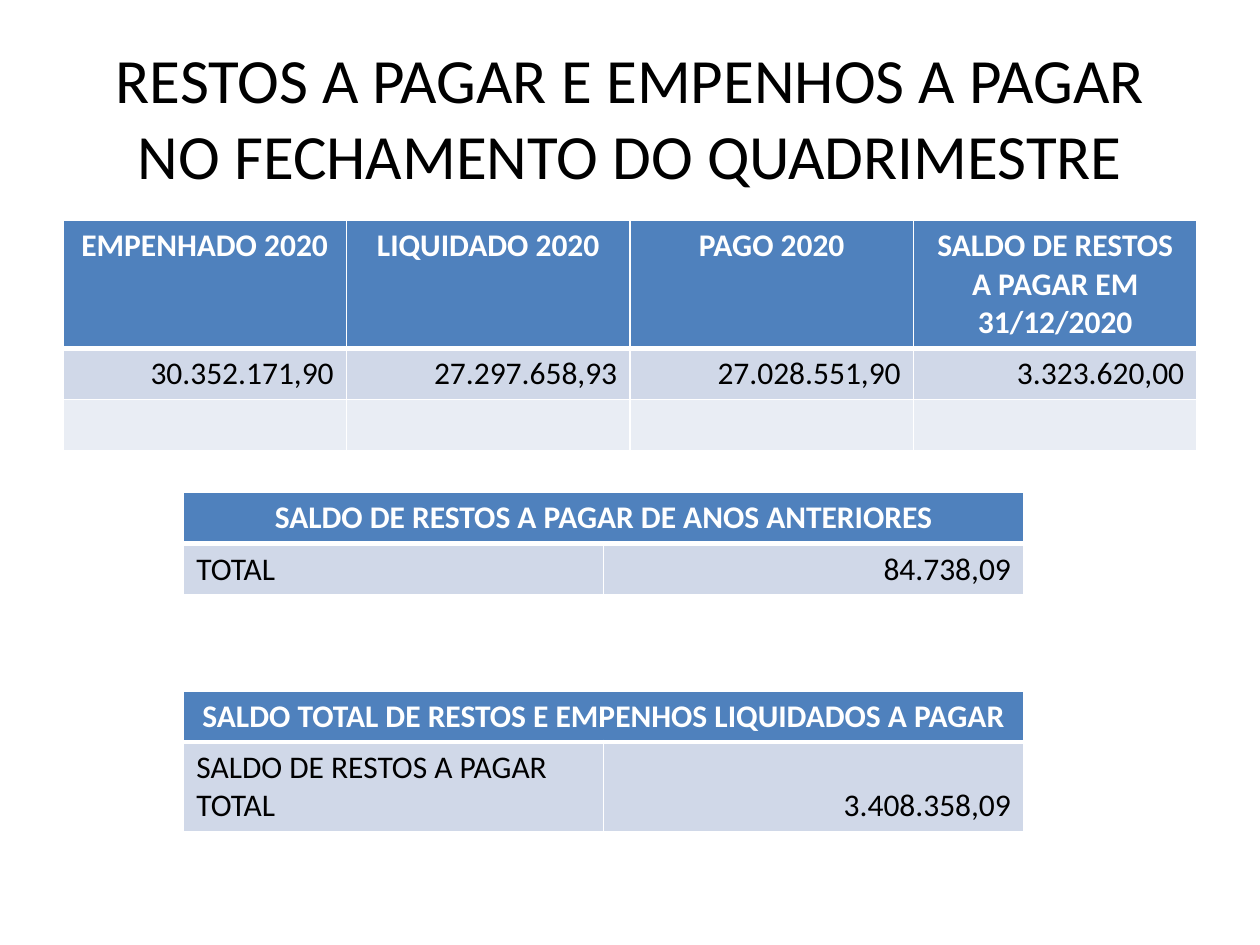
from dataclasses import dataclass

from lxml import etree
from pptx import Presentation
from pptx.dml.color import RGBColor
from pptx.enum import text
from pptx.oxml import ns
from pptx.util import Pt

LEFT, CENTER, RIGHT = text.PP_ALIGN.LEFT, text.PP_ALIGN.CENTER, text.PP_ALIGN.RIGHT


@dataclass(frozen=True)
class Theme:
    font: str = "Calibri"
    title_size: int = 36
    table_size: int = 18
    ink: str = "000000"
    paper: str = "FFFFFF"
    header: str = "4F81BD"
    bands: tuple = ("D0D8E8", "E9EDF4")
    rule: int = 1
    header_rule: int = 3


THEME = Theme()
ROW = 29.2


def format_text(frame, size, color, align, bold=False):
    for paragraph in frame.paragraphs:
        paragraph.alignment = align
        font = paragraph.font
        font.name, font.size, font.bold = THEME.font, Pt(size), bold
        font.color.rgb = RGBColor.from_string(color)


def set_borders(cell, top, bottom):
    properties = cell._tc.get_or_add_tcPr()
    widths = {"L": THEME.rule, "R": THEME.rule, "T": top, "B": bottom}
    for position, (side, width) in enumerate(widths.items()):
        line = etree.Element(ns.qn(f"a:ln{side}"), w=str(Pt(width)))
        fill = etree.SubElement(line, ns.qn("a:solidFill"))
        etree.SubElement(fill, ns.qn("a:srgbClr"), val=THEME.paper)
        properties.insert(position, line)


def add_title(slide, wording):
    title = slide.shapes.title
    title.left, title.top, title.width, title.height = Pt(36), Pt(21.6), Pt(648), Pt(90)
    title.text_frame.text = wording
    title.text_frame.vertical_anchor = text.MSO_ANCHOR.MIDDLE
    format_text(title.text_frame, THEME.title_size, THEME.ink, CENTER)


def add_balance_table(slide, left, top, width, heights, rows, aligns):
    """Header row on top; a header with a single entry spans all columns."""
    columns = len(aligns)
    table = slide.shapes.add_table(len(rows), columns, Pt(left), Pt(top),
                                   Pt(width), Pt(sum(heights))).table
    for column in table.columns:
        column.width = Pt(width / columns)
    for r, (height, entries) in enumerate(zip(heights, rows)):
        table.rows[r].height = Pt(height)
        is_header = r == 0
        fill = THEME.header if is_header else THEME.bands[(r - 1) % 2]
        for c in range(columns):
            cell = table.cell(r, c)
            cell.fill.solid()
            cell.fill.fore_color.rgb = RGBColor.from_string(fill)
            set_borders(cell, THEME.header_rule if r == 1 else THEME.rule,
                        THEME.header_rule if is_header else THEME.rule)
            if c < len(entries):
                cell.text = entries[c]
            format_text(cell.text_frame, THEME.table_size,
                        THEME.paper if is_header else THEME.ink,
                        CENTER if is_header else aligns[c], is_header)
    if len(rows[0]) == 1:
        table.cell(0, 0).merge(table.cell(0, columns - 1))
    return table


def main():
    deck = Presentation()
    deck.slide_width, deck.slide_height = Pt(720), Pt(540)
    slide = deck.slides.add_slide(deck.slide_layouts[5])

    add_title(slide, "RESTOS A PAGAR E EMPENHOS A PAGAR NO FECHAMENTO DO QUADRIMESTRE")

    # Commitments of the year
    add_balance_table(slide, 36, 126, 648, [72, ROW, ROW], [
        ["EMPENHADO 2020", "LIQUIDADO 2020", "PAGO 2020",
         "SALDO DE RESTOS A PAGAR EM 31/12/2020"],
        ["30.352.171,90", "27.297.658,93", "27.028.551,90", "3.323.620,00"],
        [],
    ], [RIGHT] * 4)

    # Balance of earlier years
    add_balance_table(slide, 105, 281.5, 480, [ROW, ROW], [
        ["SALDO DE RESTOS A PAGAR DE ANOS ANTERIORES"],
        ["TOTAL", "84.738,09"],
    ], [LEFT, RIGHT])

    # Overall balance, with the amount level with the label's last line
    overall = add_balance_table(slide, 105, 394.8, 480, [ROW, 50.4], [
        ["SALDO TOTAL DE RESTOS E EMPENHOS LIQUIDADOS A PAGAR"],
        ["SALDO DE RESTOS A PAGAR TOTAL", "3.408.358,09"],
    ], [LEFT, RIGHT])
    overall.cell(1, 1).vertical_anchor = text.MSO_ANCHOR.BOTTOM

    deck.save("out.pptx")


if __name__ == "__main__":
    main()
